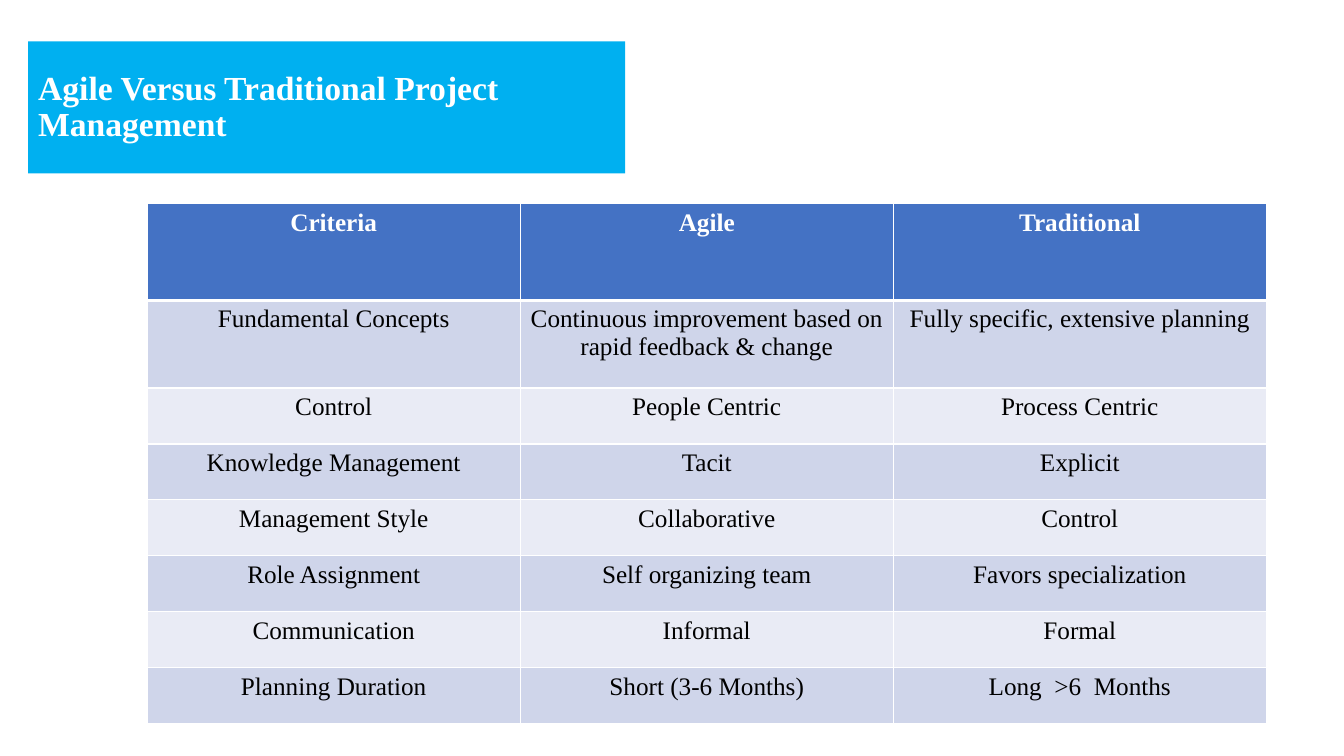
from lxml import etree
from pptx import Presentation, util as u
from pptx.dml.color import RGBColor
from pptx.enum import shapes, text
from pptx.oxml.ns import qn

FONT = "Times New Roman"
HUES = {"title": "00B0F0", "head": "4472C4", "odd": "CFD5EA",
        "even": "E9EBF5", "white": "FFFFFF", "black": "000000"}
ROWS = [
    ("Criteria", "Agile", "Traditional"),
    ("Fundamental Concepts",
     "Continuous improvement based on rapid feedback & change",
     "Fully specific, extensive planning"),
    ("Control", "People Centric", "Process Centric"),
    ("Knowledge Management", "Tacit", "Explicit"),
    ("Management Style", "Collaborative", "Control"),
    ("Role Assignment", "Self organizing team", "Favors specialization"),
    ("Communication", "Informal", "Formal"),
    ("Planning Duration", "Short (3-6 Months)", "Long  >6  Months"),
]
COL = 3.7
TALL = [0.96, 0.87] + [0.555] * (len(ROWS) - 2)


def write(frame, words, size, hue, bold, align):
    para = frame.paragraphs[0]
    para.alignment = align
    run = para.add_run()
    run.text = words
    run.font.name = FONT
    run.font.size = u.Pt(size)
    run.font.bold = bold
    run.font.color.rgb = RGBColor.from_string(HUES[hue])
    return para


def edge(cell, side, width):
    """Draw a white border on one side: lnL, lnR, lnT or lnB."""
    line = etree.Element(qn("a:" + side), w=str(u.Pt(width)))
    fill = etree.SubElement(line, qn("a:solidFill"))
    etree.SubElement(fill, qn("a:srgbClr"), val=HUES["white"])
    cell._tc.get_or_add_tcPr().append(line)


deck = Presentation()
deck.slide_width, deck.slide_height = u.Inches(13.33), u.Inches(7.5)
slide = deck.slides.add_slide(deck.slide_layouts[6])

# Title block
title = slide.shapes.add_shape(
    shapes.MSO_SHAPE.RECTANGLE,
    u.Inches(0.28), u.Inches(0.41), u.Inches(5.92), u.Inches(1.31))
title.shadow.inherit = False
title.fill.solid()
title.fill.fore_color.rgb = RGBColor.from_string(HUES["title"])
title.line.fill.background()
title.text_frame.word_wrap = True
title.text_frame.vertical_anchor = text.MSO_ANCHOR.MIDDLE
para = write(title.text_frame, "Agile Versus Traditional Project Management",
             24, "white", True, text.PP_ALIGN.LEFT)
para.line_spacing = 0.9

# Comparison table
table = slide.shapes.add_table(
    len(ROWS), len(ROWS[0]), u.Inches(1.46), u.Inches(2.02),
    u.Inches(COL * len(ROWS[0])), u.Inches(sum(TALL))).table
for col in table.columns:
    col.width = u.Inches(COL)
for r, row in enumerate(ROWS):
    table.rows[r].height = u.Inches(TALL[r])
    head = r == 0
    band = "head" if head else "odd" if r % 2 else "even"
    for c, words in enumerate(row):
        cell = table.cell(r, c)
        write(cell.text_frame, words, 18, "white" if head else "black",
              head, text.PP_ALIGN.CENTER)
        for side in ("lnL", "lnR", "lnT", "lnB"):
            thick = (r, side) in ((0, "lnB"), (1, "lnT"))
            edge(cell, side, 3 if thick else 1)
        cell.fill.solid()
        cell.fill.fore_color.rgb = RGBColor.from_string(HUES[band])

deck.save("out.pptx")
